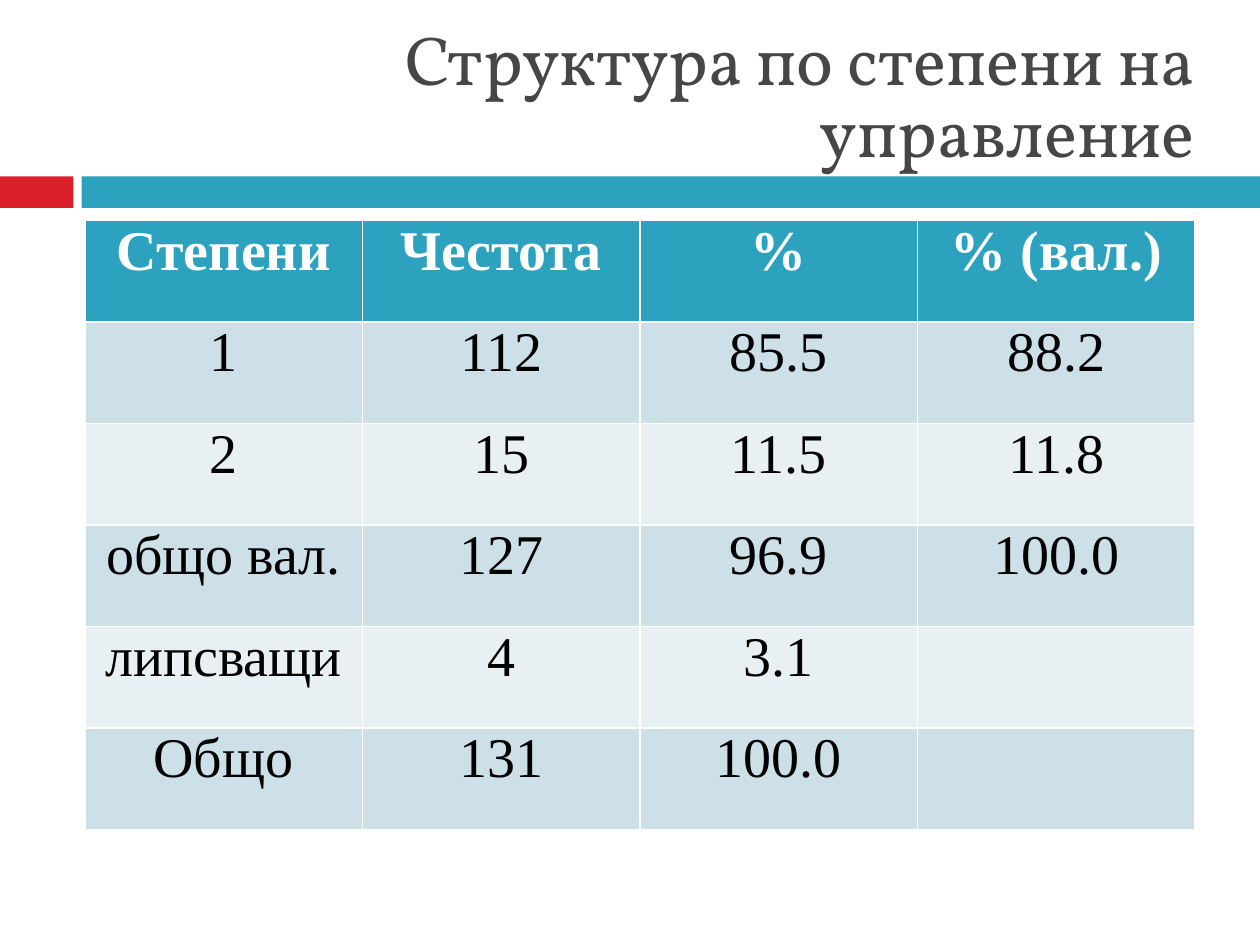
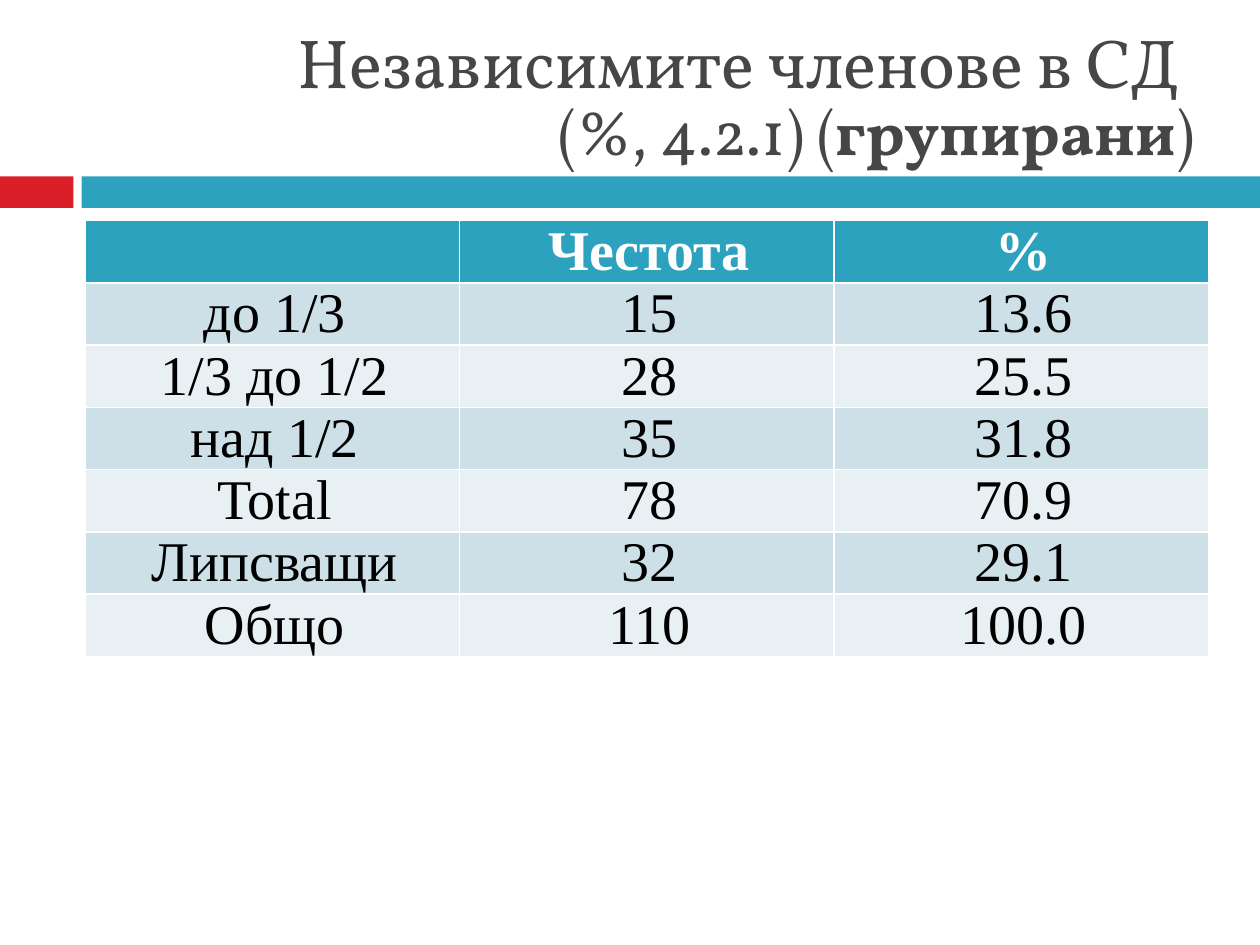
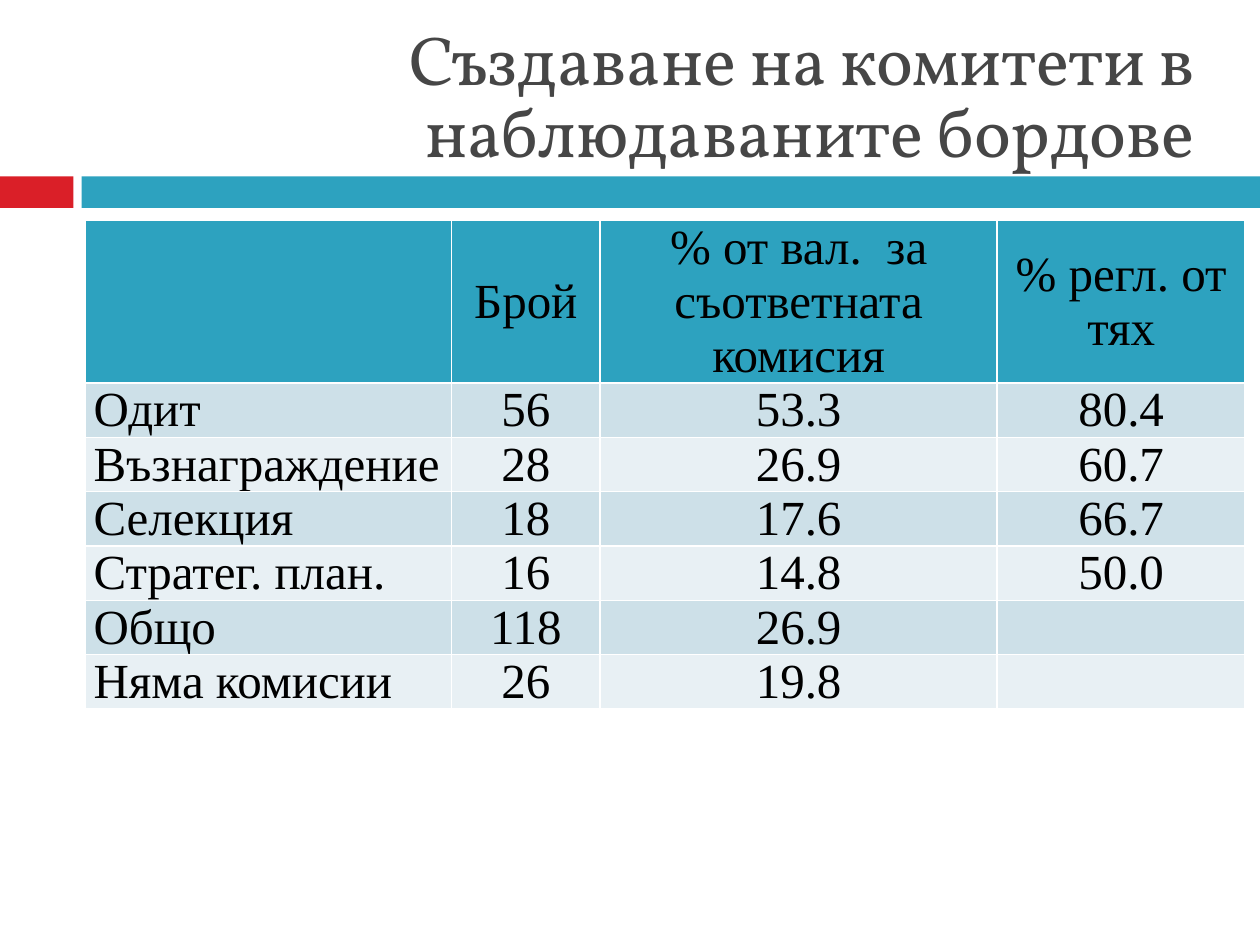
from pptx import Presentation
from pptx import util as u
from pptx.dml.color import RGBColor
from pptx.enum import shapes, text

TEAL, RED, GREY, WHITE, BLACK = "2DA2BF", "DA1F28", "464646", "FFFFFF", "000000"
STRIPES = "CDE0E8", "E8F0F4"
TITLE_FONT, TABLE_FONT = "Vollkorn", "Times New Roman"
TITLE_SIZE, TITLE_SPACING = 39.6, 0.87
TITLE_AREA = 48, 18, 642, 78
BANDS = [(0, 42, RED), (46.6, 673.4, TEAL)]
BAND_TOP, BAND_HEIGHT = 100.8, 18
TABLE_LEFT, TABLE_TOP = 48.5, 126
TOP, MIDDLE, BOTTOM = (text.MSO_ANCHOR.TOP, text.MSO_ANCHOR.MIDDLE,
                       text.MSO_ANCHOR.BOTTOM)
CENTER, LEFT = text.PP_ALIGN.CENTER, text.PP_ALIGN.LEFT

SLIDES = [
    {
        "title": [[("Структура по степени на управление", TITLE_SIZE, False)]],
        "rows": [
            ["Степени", "Честота", "%", "% (вал.)"],
            ["1", "112", "85.5", "88.2"],
            ["2", "15", "11.5", "11.8"],
            ["общо вал.", "127", "96.9", "100.0"],
            ["липсващи", "4", "3.1", ""],
            ["Общо", "131", "100.0", ""],
        ],
        "widths": [158.6] * 4, "heights": (58, 58), "margins": (5, 5),
        "size": 32, "head": (WHITE, True), "anchors": (TOP, TOP),
        "first_align": CENTER,
    },
    {
        "title": [
            [("Независимите членове в СД ", TITLE_SIZE, False)],
            [("(%, 4.2.1) (", 36, False), ("групирани", 36, True), (")", 36, False)],
        ],
        "rows": [
            ["", "Честота", "%"],
            ["до 1/3", "15", "13.6"],
            ["1/3 до 1/2", "28", "25.5"],
            ["над 1/2", "35", "31.8"],
            ["Total", "78", "70.9"],
            ["Липсващи", "32", "29.1"],
            ["Общо", "110", "100.0"],
        ],
        "widths": [214] * 3, "heights": (35.5, 35.5), "margins": (3, 0),
        "size": 32, "head": (WHITE, True), "anchors": (BOTTOM, TOP),
        "first_align": CENTER,
    },
    {
        "title": [[("Създаване на комитети в наблюдаваните бордове", TITLE_SIZE, False)]],
        "rows": [
            ["", "Брой", "% от вал.  за съответната комисия", "% регл. от тях"],
            ["Одит", "56", "53.3", "80.4"],
            ["Възнаграждение", "28", "26.9", "60.7"],
            ["Селекция", "18", "17.6", "66.7"],
            ["Стратег. план.", "16", "14.8", "50.0"],
            ["Общо", "118", "26.9", ""],
            ["Няма комисии", "26", "19.8", ""],
        ],
        "widths": [209.5, 85, 226.8, 141.8], "heights": (93, 31), "margins": (5, 5),
        "size": 28, "head": (BLACK, False), "anchors": (MIDDLE, BOTTOM),
        "first_align": LEFT,
    },
]


def paint(fill, color):
    fill.solid()
    fill.fore_color.rgb = RGBColor.from_string(color)


def style(span, font, size, color, bold):
    span.font.name, span.font.size, span.font.bold = font, u.Pt(size), bold
    span.font.color.rgb = RGBColor.from_string(color)


def add_bands(page, layout):
    for left, width, color in BANDS:
        band = page.shapes.add_shape(shapes.MSO_SHAPE.RECTANGLE, u.Pt(left),
                                     u.Pt(BAND_TOP), u.Pt(width), u.Pt(BAND_HEIGHT))
        paint(band.fill, color)
        band.line.fill.background()
        band.shadow.inherit = False
        layout.shapes.element.append(band.element)


def write_title(box, lines):
    box.left, box.top, box.width, box.height = map(u.Pt, TITLE_AREA)
    box.text_frame.auto_size = text.MSO_AUTO_SIZE.NONE
    box.text_frame.vertical_anchor = MIDDLE
    para = box.text_frame.paragraphs[0]
    para.alignment, para.line_spacing = text.PP_ALIGN.RIGHT, TITLE_SPACING
    for number, line in enumerate(lines):
        if number:
            para.add_line_break()
        for words, size, bold in line:
            span = para.add_run()
            span.text = words
            style(span, TITLE_FONT, size, GREY, bold)


def fill_cell(cell, words, row, column, content):
    paint(cell.fill, STRIPES[(row - 1) % 2] if row else TEAL)
    if not words:
        return
    cell.margin_left, cell.margin_right = map(u.Pt, content["margins"])
    cell.margin_top = cell.margin_bottom = 0
    cell.vertical_anchor = content["anchors"][row > 0]
    cell.text_frame.text = words
    para = cell.text_frame.paragraphs[0]
    para.alignment = CENTER if column or not row else content["first_align"]
    color, bold = (BLACK, False) if row else content["head"]
    style(para.runs[0], TABLE_FONT, content["size"], color, bold)


def add_grid(page, content):
    rows, widths = content["rows"], content["widths"]
    head, body = content["heights"]
    heights = [head] + [body] * (len(rows) - 1)
    table = page.shapes.add_table(len(rows), len(widths), u.Pt(TABLE_LEFT), u.Pt(TABLE_TOP),
                                  u.Pt(sum(widths)), u.Pt(sum(heights))).table
    for column, width in zip(table.columns, widths):
        column.width = u.Pt(width)
    for row, (values, height) in enumerate(zip(rows, heights)):
        table.rows[row].height = u.Pt(height)
        for column, words in enumerate(values):
            fill_cell(table.cell(row, column), words, row, column, content)


def main():
    """Build the three table slides and save the deck."""
    deck = Presentation()
    deck.slide_width, deck.slide_height = u.Pt(720), u.Pt(540)
    layout = deck.slide_layouts[5]
    for number, content in enumerate(SLIDES):
        page = deck.slides.add_slide(layout)
        if number == 0:
            add_bands(page, layout)
        write_title(page.shapes.title, content["title"])
        add_grid(page, content)
    deck.save("out.pptx")


if __name__ == "__main__":
    main()
